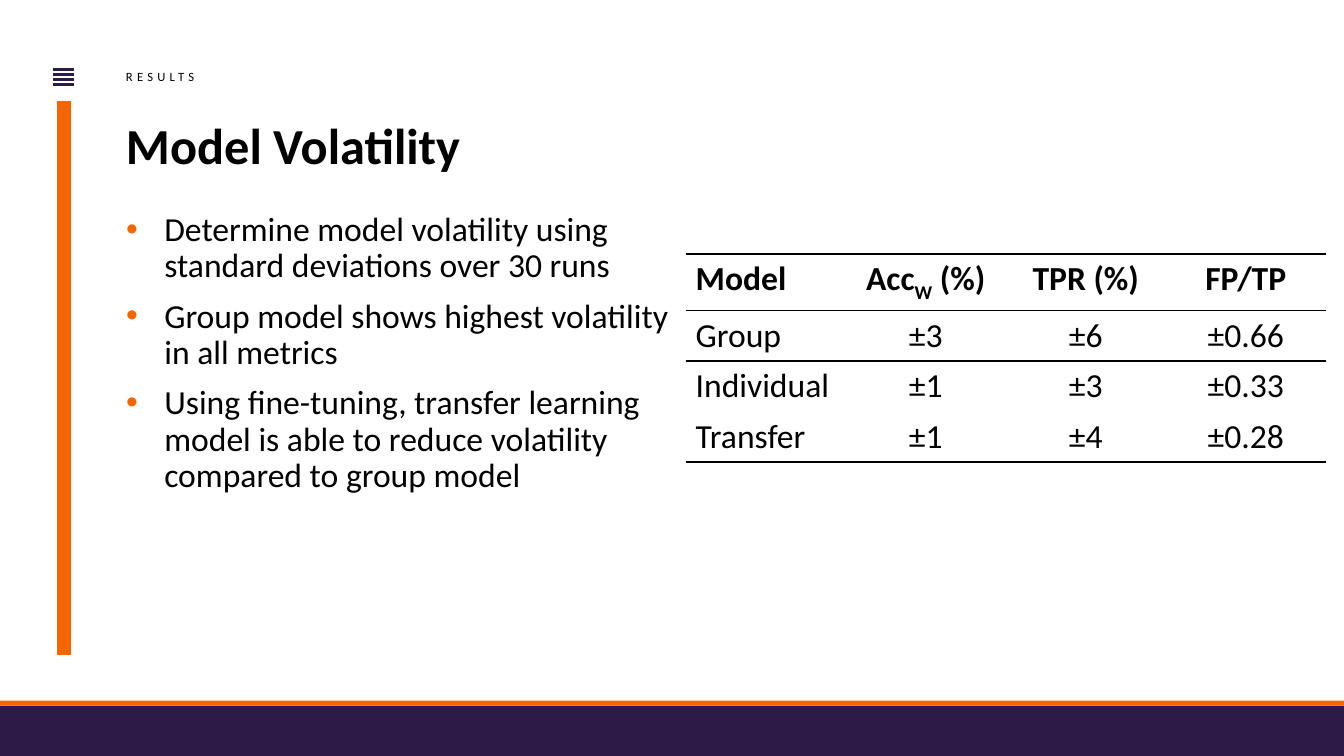
from lxml.etree import SubElement
from pptx import Presentation
from pptx.dml.color import RGBColor
from pptx.enum.shapes import MSO_CONNECTOR, MSO_SHAPE
from pptx.enum.text import PP_ALIGN
from pptx.oxml.ns import qn
from pptx.util import Inches, Pt

PURPLE = RGBColor(0x2E, 0x1A, 0x47)
ORANGE = RGBColor(0xF5, 0x66, 0x00)
BLACK = RGBColor(0, 0, 0)
FONT = "Calibri"

SECTION = "RESULTS"
TITLE = "Model Volatility"
BULLETS = [
    "Determine model volatility using standard deviations over 30 runs",
    "Group model shows highest volatility in all metrics",
    "Using fine-tuning, transfer learning model is able to reduce volatility "
    "compared to group model",
]
# A cell is a string, or a tuple of text, subscript, text
ROWS = [
    ["Model", ("Acc", "W", " (%)"), "TPR (%)", "FP/TP"],
    ["Group", "±3", "±6", "±0.66"],
    ["Individual", "±1", "±3", "±0.33"],
    ["Transfer", "±1", "±4", "±0.28"],
]
RULES = [2.25, 1.5, 1.5, 0, 1.5]  # points, from above the header to below the last row
ROW_HEIGHTS = [0.56, 0.5, 0.5, 0.5]
TABLE_LEFT, TABLE_TOP, TABLE_WIDTH = 6.8, 2.52, 6.35


def add_run(p, text, size, bold=False, spacing=0, baseline=0):
    r = p.add_run()
    r.text = text
    r.font.name, r.font.size, r.font.bold = FONT, Pt(size), bold
    r.font.color.rgb = BLACK
    rPr = r.font._element
    if spacing:
        rPr.set("spc", str(spacing * 100))
    if baseline:
        rPr.set("baseline", str(baseline * 1000))


def add_bullet(p):
    pPr = p._p.get_or_add_pPr()
    pPr.set("marL", str(Inches(0.38)))
    pPr.set("indent", str(-Inches(0.38)))
    color = SubElement(pPr, qn("a:buClr"))
    SubElement(color, qn("a:srgbClr"), val=str(ORANGE))
    SubElement(pPr, qn("a:buFont"), typeface="Arial")
    SubElement(pPr, qn("a:buChar"), char="•")


def add_text(slide, paragraphs, left, top, width, height, line=0.9, bullets=False, **fmt):
    box = slide.shapes.add_textbox(*map(Inches, (left, top, width, height)))
    tf = box.text_frame
    tf.word_wrap = True
    tf.margin_left = tf.margin_right = tf.margin_top = tf.margin_bottom = 0
    for i, text in enumerate(paragraphs):
        p = tf.add_paragraph() if i else tf.paragraphs[0]
        if bullets:
            add_bullet(p)
        p.line_spacing = line
        p.space_before = Pt(10 if i else 0)
        add_run(p, text, **fmt)


def add_line(slide, x1, y1, x2, y2, color, width):
    line = slide.shapes.add_connector(MSO_CONNECTOR.STRAIGHT, *map(Inches, (x1, y1, x2, y2)))
    line.line.color.rgb, line.line.width = color, Pt(width)
    SubElement(line._element.spPr, qn("a:effectLst"))


def add_band(slide, top, height, color):
    sp = slide.shapes.add_shape(MSO_SHAPE.RECTANGLE, 0, Inches(top), Inches(13.33), Inches(height))
    sp.shadow.inherit = False
    sp.fill.solid()
    sp.fill.fore_color.rgb = color
    sp.line.fill.background()


def set_borders(cell, above, below):
    tcPr = cell._tc.get_or_add_tcPr()
    for side, width in (("L", 0), ("R", 0), ("T", above), ("B", below)):
        ln = SubElement(tcPr, qn(f"a:ln{side}"), w=str(Pt(width)))
        if width:
            fill = SubElement(ln, qn("a:solidFill"))
            SubElement(fill, qn("a:srgbClr"), val=str(BLACK))
        else:
            SubElement(ln, qn("a:noFill"))


def add_results_table(slide):
    frame = slide.shapes.add_table(
        len(ROWS), len(ROWS[0]),
        *map(Inches, (TABLE_LEFT, TABLE_TOP, TABLE_WIDTH, sum(ROW_HEIGHTS))))
    table = frame.table
    table.first_row = table.horz_banding = False
    for r, row in enumerate(ROWS):
        table.rows[r].height = Inches(ROW_HEIGHTS[r])
        for c, content in enumerate(row):
            cell = table.cell(r, c)
            set_borders(cell, RULES[r], RULES[r + 1])
            cell.fill.background()
            p = cell.text_frame.paragraphs[0]
            p.alignment = PP_ALIGN.CENTER if c else PP_ALIGN.LEFT
            parts = (content,) if isinstance(content, str) else content
            for i, part in enumerate(parts):
                add_run(p, part, 24, bold=r == 0, baseline=-25 if i == 1 else 0)


def main():
    prs = Presentation()
    prs.slide_width, prs.slide_height = Inches(13.33), Inches(7.5)
    slide = prs.slides.add_slide(prs.slide_layouts[6])

    for i in range(4):
        y = 0.69 + 0.05 * i
        add_line(slide, 0.53, y, 0.73, y, PURPLE, 1.75)
    add_line(slide, 0.63, 1, 0.63, 6.5, ORANGE, 10)
    add_band(slide, 7, 0.5, PURPLE)
    add_band(slide, 6.95, 0.05, ORANGE)

    add_text(slide, BULLETS, 1.25, 2.11, 5.42, 2.83, bullets=True, size=24)
    add_text(slide, [TITLE], 1.25, 1.25, 9.43, 0.5, line=0.8, size=36, bold=True)
    add_text(slide, [SECTION], 1.25, 0.7, 4.17, 0.14, size=9, spacing=3)
    add_results_table(slide)
    prs.save("out.pptx")


if __name__ == "__main__":
    main()
